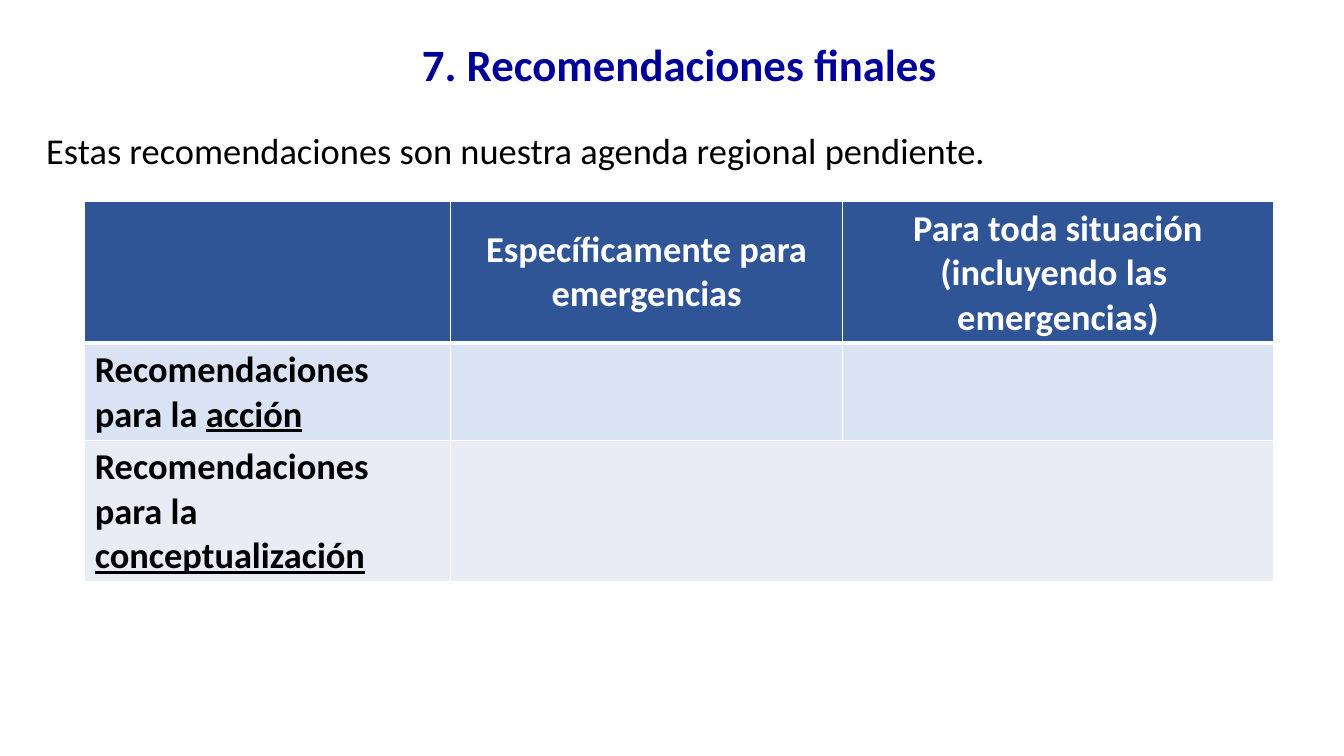
from lxml.etree import SubElement
from pptx import Presentation
from pptx.dml.color import RGBColor as RGB
from pptx.enum.text import MSO_ANCHOR as Anchor, PP_ALIGN as Align
from pptx.oxml.ns import qn
from pptx.util import Inches, Pt

HUES = {
    "title": "000099", "text": "000000", "white": "FFFFFF",
    "head": "2F5597", "action": "DAE3F3", "concept": "E9EBF5",
}
COLS = (3.63, 3.89, 4.27)
ROWS = (1.27, 0.88, 1.23)
FILLS = ("head", "action", "concept")
HEADS = ("Específicamente para emergencias",
         "Para toda situación (incluyendo las  emergencias)")
TOPICS = ("acción", "conceptualización")


def style(para, size, hue, bold=False, align=Align.LEFT):
    """Set the font and alignment of a paragraph."""
    para.alignment = align
    font = para.font
    font.name, font.size, font.bold = "Calibri", Pt(size), bold
    font.color.rgb = RGB.from_string(HUES[hue])


def add_text(slide, box, text, *look):
    """Add a one-paragraph text box."""
    frame = slide.shapes.add_textbox(*map(Inches, box)).text_frame
    frame.word_wrap = True
    para = frame.paragraphs[0]
    para.text = text
    style(para, *look)


def add_edge(cell, side, width):
    """Draw a white border on one side of a cell."""
    line = SubElement(cell._tc.get_or_add_tcPr(), qn(f"a:ln{side}"), w=str(Pt(width)))
    fill = SubElement(line, qn("a:solidFill"))
    SubElement(fill, qn("a:srgbClr"), val=HUES["white"])


def paint(cell, row):
    """Give a cell its borders, fill and anchor."""
    thick = {(0, "B"), (1, "T")}
    for side in "LRTB":
        add_edge(cell, side, 3 if (row, side) in thick else 1)
    cell.fill.solid()
    cell.fill.fore_color.rgb = RGB.from_string(HUES[FILLS[row]])
    cell.vertical_anchor = Anchor.MIDDLE


def add_grid(slide):
    """Add the table of recommendations."""
    box = map(Inches, (0.84, 2, sum(COLS), sum(ROWS)))
    table = slide.shapes.add_table(len(ROWS), len(COLS), *box).table
    for col, width in zip(table.columns, COLS):
        col.width = Inches(width)
    for num, height in enumerate(ROWS):
        table.rows[num].height = Inches(height)
        for cell in table.rows[num].cells:
            paint(cell, num)
    for num, text in enumerate(HEADS, 1):
        para = table.cell(0, num).text_frame.paragraphs[0]
        para.text = text
        style(para, 26, "white", True, Align.CENTER)
    for num, topic in enumerate(TOPICS, 1):
        para = table.cell(num, 0).text_frame.paragraphs[0]
        para.text = "Recomendaciones para la "
        run = para.add_run()
        run.text = topic
        run.font.underline = True
        style(para, 26, "text", True)
    table.cell(2, 1).merge(table.cell(2, 2))


def main():
    """Build the slide and save it."""
    deck = Presentation()
    deck.slide_width, deck.slide_height = Inches(13.33), Inches(7.5)
    slide = deck.slides.add_slide(deck.slide_layouts[6])
    add_text(slide, (0.62, 0.32, 12.24, 0.64), "7. Recomendaciones finales",
             32, "title", True, Align.CENTER)
    add_text(slide, (0.36, 1.22, 12.62, 0.54),
             "Estas recomendaciones son nuestra agenda regional pendiente.",
             26, "text")
    add_grid(slide)
    deck.save("out.pptx")


if __name__ == "__main__":
    main()
